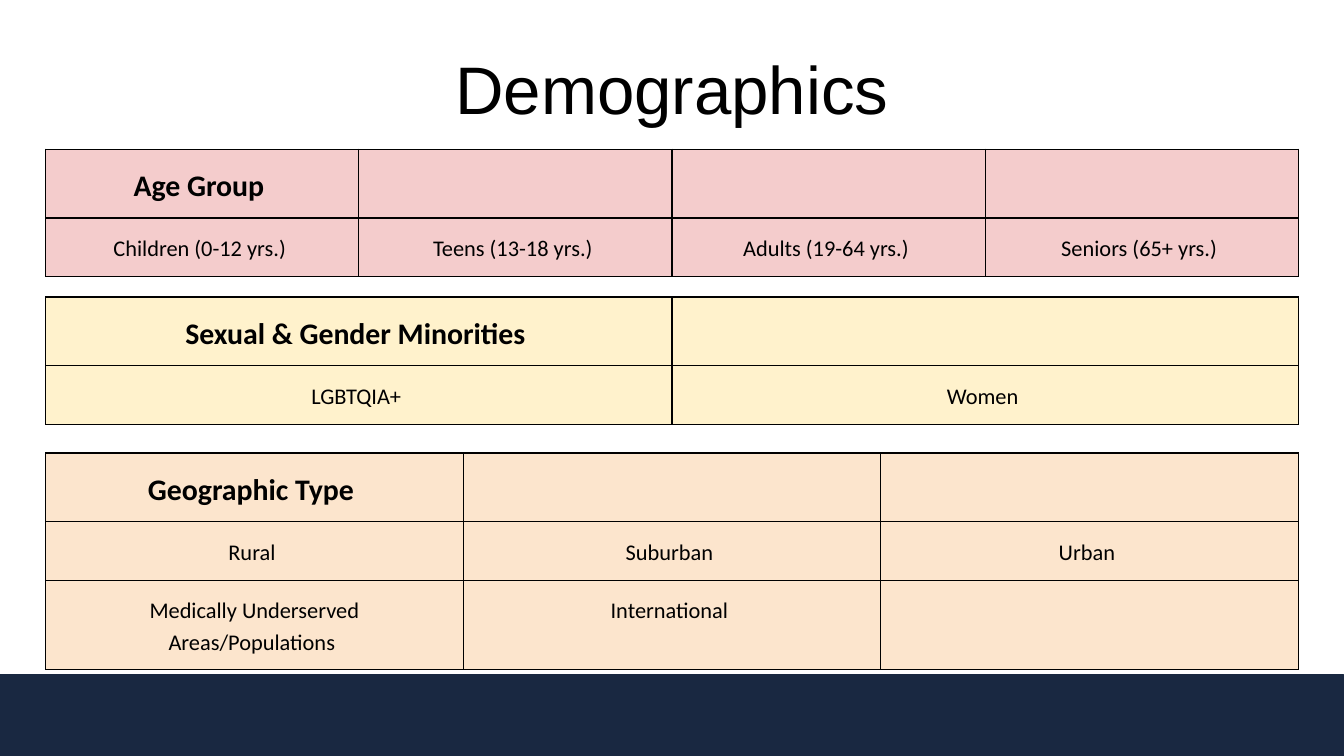
import pptx
import pptx.util
import pptx.dml.color
import pptx.enum.shapes
import pptx.enum.text
import pptx.oxml
import pptx.oxml.ns

Inches = pptx.util.Inches
Pt = pptx.util.Pt
center = pptx.enum.text.PP_ALIGN.CENTER
colors = {
    "text": "000000",
    "band": "192841",
    "age": "F4CCCC",
    "gender": "FFF2CC",
    "geography": "FCE5CD",
}


def color(name):
    return pptx.dml.color.RGBColor.from_string(colors[name])


def add_borders(cell):
    properties = cell._tc.get_or_add_tcPr()
    for index, side in enumerate(("lnL", "lnR", "lnT", "lnB")):
        border = pptx.oxml.parse_xml(
            f'<a:{side} {pptx.oxml.ns.nsdecls("a")} w="{Pt(0.75)}"><a:solidFill>'
            f'<a:srgbClr val="{colors["text"]}"/></a:solidFill></a:{side}>'
        )
        properties.insert(index, border)


presentation = pptx.Presentation()
presentation.slide_width = Inches(10)
presentation.slide_height = Inches(5.625)
slide = presentation.slides.add_slide(presentation.slide_layouts[5])

margin = Inches(0.34)
content_width = presentation.slide_width - 2 * margin
inset = Inches(0.1)
indent = Inches(0.07)
header_height, row_height, tall_row_height = 0.51, 0.43, 0.66

title = slide.shapes.title
title.left, title.top = margin, Inches(0.19)
title.width, title.height = content_width, Inches(0.92)
title_frame = title.text_frame
title_frame.text = "Demographics"
title_frame.vertical_anchor = pptx.enum.text.MSO_ANCHOR.MIDDLE
title_frame.margin_left = title_frame.margin_right = inset
title_frame.margin_top = title_frame.margin_bottom = inset
paragraph = title_frame.paragraphs[0]
paragraph.alignment = center
paragraph.font.name = "Arial"
paragraph.font.size = Pt(36)
paragraph.font.color.rgb = color("text")

band_height = Inches(0.6)
band = slide.shapes.add_shape(
    pptx.enum.shapes.MSO_SHAPE.RECTANGLE,
    0, presentation.slide_height - band_height, presentation.slide_width, band_height,
)
band.shadow.inherit = False
band.fill.solid()
band.fill.fore_color.rgb = color("band")
band.line.color.rgb = color("band")
band.line.width = Pt(1.5)

tables = [
    ("geography", 3.37, [header_height, row_height, tall_row_height], [
        ["Geographic Type ", "", ""],
        ["Rural ", "Suburban ", "Urban "],
        ["Medically Underserved Areas/Populations ", "International ", ""],
    ]),
    ("gender", 2.21, [header_height, row_height], [
        ["Sexual & Gender Minorities ", ""],
        ["LGBTQIA+ ", "Women "],
    ]),
    ("age", 1.11, [header_height, row_height], [
        ["Age Group ", "", "", ""],
        ["Children (0-12 yrs.) ", "Teens (13-18 yrs.) ", "Adults (19-64 yrs.) ", "Seniors (65+ yrs.) "],
    ]),
]

for fill_name, top, heights, rows in tables:
    column_count = len(rows[0])
    table = slide.shapes.add_table(
        len(rows), column_count, margin, Inches(top), content_width, Inches(sum(heights))
    ).table
    for column in table.columns:
        column.width = content_width // column_count
    for row_index, texts in enumerate(rows):
        table.rows[row_index].height = Inches(heights[row_index])
        for column_index, text in enumerate(texts):
            cell = table.cell(row_index, column_index)
            cell.fill.solid()
            cell.fill.fore_color.rgb = color(fill_name)
            add_borders(cell)
            cell.margin_left = cell.margin_right = inset
            cell.margin_top = cell.margin_bottom = inset
            cell.text = text
            paragraph = cell.text_frame.paragraphs[0]
            paragraph.alignment = center
            paragraph.line_spacing = 1.15
            for side in ("marL", "marR"):
                paragraph._p.get_or_add_pPr().set(side, str(indent))
            paragraph.font.name = "Calibri"
            paragraph.font.size = Pt(12 if row_index else 16)
            paragraph.font.bold = row_index == 0
            paragraph.font.color.rgb = color("text")

presentation.save("out.pptx")
